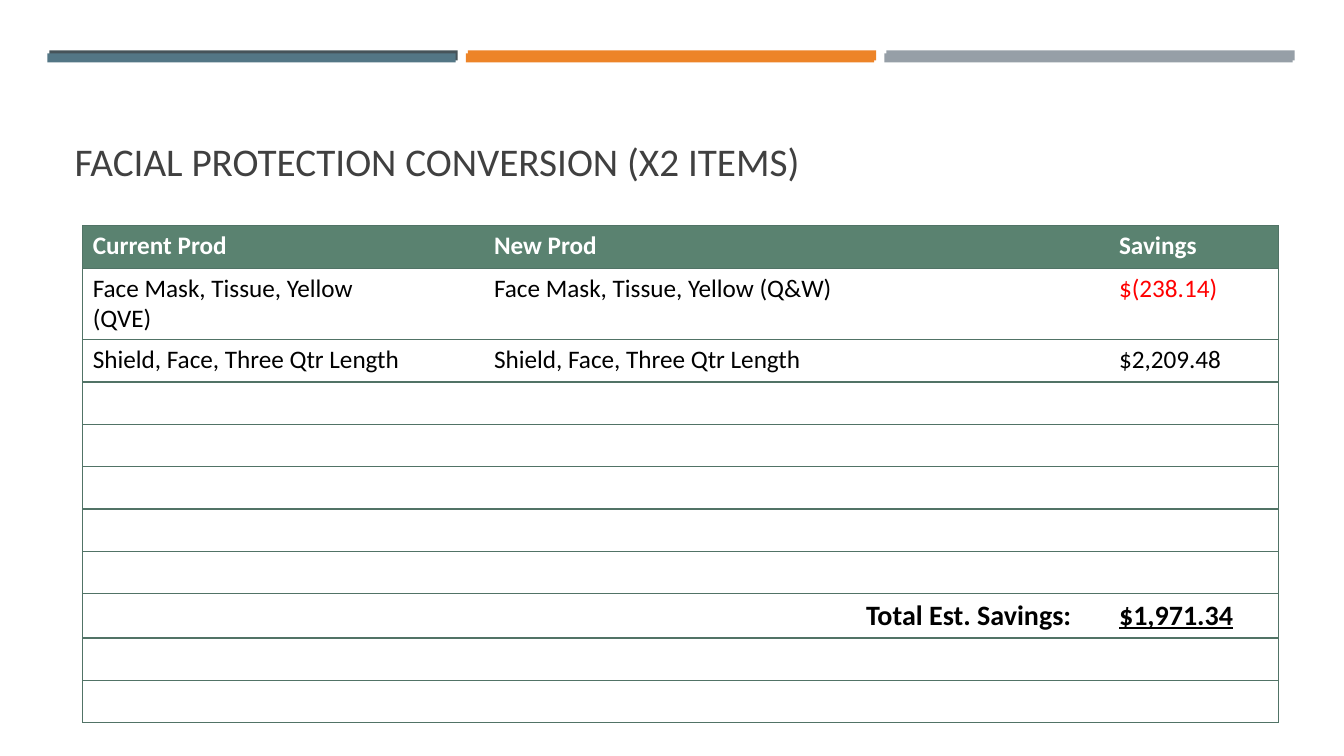
from pptx import Presentation
from pptx.dml.color import RGBColor
from pptx.enum.shapes import MSO_SHAPE as Shape
from pptx.enum.text import MSO_ANCHOR as Anchor, PP_ALIGN as Align
from pptx.oxml import parse_xml
from pptx.oxml.ns import nsdecls, qn
from pptx.util import Inches, Pt

WHITE = RGBColor(0xFF, 0xFF, 0xFF)
BLACK = RGBColor(0, 0, 0)
RED = RGBColor(0xFF, 0, 0)
TITLE_GRAY = RGBColor(0x40, 0x40, 0x40)
DARK_SLATE = RGBColor(0x46, 0x53, 0x59)
TEAL = RGBColor(0x53, 0x76, 0x85)
ORANGE = RGBColor(0xED, 0x84, 0x28)
GRAY = RGBColor(0x96, 0x9F, 0xA7)
HEADER_GREEN = RGBColor(0x5A, 0x82, 0x70)
BORDER_GREEN = RGBColor(0x51, 0x73, 0x66)

FONT = "Calibri"
NO_STYLE = "{2D5ABB26-0587-4C30-8999-92F81FD0307C}"
COLUMN_WIDTHS = [3.41, 0.57, 3.69, 2.51, 1.68]
ROW_COUNT = 11
TOTAL_ROW = 8
ROW_HEIGHT = 0.42
TOTAL_HEIGHT = 0.44
ROWS = {
    0: ["Current Prod", "", "New Prod", "", "Savings"],
    1: ["Face Mask, Tissue, Yellow (QVE)", "",
        "Face Mask, Tissue, Yellow (Q&W)", "", "$(238.14)"],
    2: ["Shield, Face, Three Qtr Length", "",
        "Shield, Face, Three Qtr Length", "", "$2,209.48"],
    TOTAL_ROW: ["", "", "", "Total Est. Savings:", "$1,971.34"],
}


def format_font(font, size, color, bold=False):
    font.name = FONT
    font.size = Pt(size)
    font.bold = bold
    font.color.rgb = color


def add_bars(slide, left, top, height, colors):
    for index, color in enumerate(colors):
        bar = slide.shapes.add_shape(
            Shape.RECTANGLE, Inches(left + index * 4.15), Inches(top),
            Inches(4.05), Inches(height))
        bar.shadow.inherit = False
        bar.fill.solid()
        bar.fill.fore_color.rgb = color
        bar.line.fill.background()


def set_title(slide, text):
    title = slide.shapes.title
    title.left, title.top = Inches(0.64), Inches(0.8)
    title.width, title.height = Inches(12.06), Inches(1.08)
    frame = title.text_frame
    frame.text = text
    frame.word_wrap = True
    frame.vertical_anchor = Anchor.BOTTOM
    paragraph = frame.paragraphs[0]
    paragraph.alignment = Align.LEFT
    format_font(paragraph.runs[0].font, 28, TITLE_GRAY)


def set_borders(cell, sides):
    properties = cell._tc.get_or_add_tcPr()
    for side in sides:
        properties.append(parse_xml(
            f'<a:ln{side} {nsdecls("a")} w="12700"><a:solidFill>'
            f'<a:srgbClr val="{BORDER_GREEN}"/></a:solidFill></a:ln{side}>'))


def fill_cell(cell, text, row, column):
    last_column = len(COLUMN_WIDTHS) - 1
    sides = ["L"] * (column == 0) + ["R"] * (column == last_column)
    set_borders(cell, sides + ["T", "B"])
    cell.fill.solid()
    cell.fill.fore_color.rgb = HEADER_GREEN if row == 0 else WHITE
    if not text:
        return
    cell.text_frame.text = text
    font = cell.text_frame.paragraphs[0].runs[0].font
    color = WHITE if row == 0 else RED if text.startswith("$(") else BLACK
    format_font(font, 20 if row == TOTAL_ROW else 18, color, row in (0, TOTAL_ROW))
    if row == TOTAL_ROW and column == last_column:
        font.underline = True


def add_savings_table(slide):
    height = ROW_HEIGHT * (ROW_COUNT - 1) + TOTAL_HEIGHT
    frame = slide.shapes.add_table(
        ROW_COUNT, len(COLUMN_WIDTHS), Inches(0.82), Inches(2.24),
        Inches(sum(COLUMN_WIDTHS)), Inches(height))
    table = frame.table
    table.horz_banding = False
    table._tbl.tblPr.find(qn("a:tableStyleId")).text = NO_STYLE
    for column, width in zip(table.columns, COLUMN_WIDTHS):
        column.width = Inches(width)
    blank_row = [""] * len(COLUMN_WIDTHS)
    for row in range(ROW_COUNT):
        row_height = TOTAL_HEIGHT if row == TOTAL_ROW else ROW_HEIGHT
        table.rows[row].height = Inches(row_height)
        for column, text in enumerate(ROWS.get(row, blank_row)):
            fill_cell(table.cell(row, column), text, row, column)


def main():
    presentation = Presentation()
    presentation.slide_width = Inches(13.33)
    presentation.slide_height = Inches(7.5)
    slide = presentation.slides.add_slide(presentation.slide_layouts[5])
    add_bars(slide, 0.49, 0.5, 0.1, [DARK_SLATE, ORANGE, GRAY])
    add_bars(slide, 0.47, 0.53, 0.09, [TEAL, ORANGE, GRAY])
    set_title(slide, "FACIAL PROTECTION CONVERSION (X2 ITEMS)")
    add_savings_table(slide)
    presentation.save("out.pptx")


if __name__ == "__main__":
    main()
